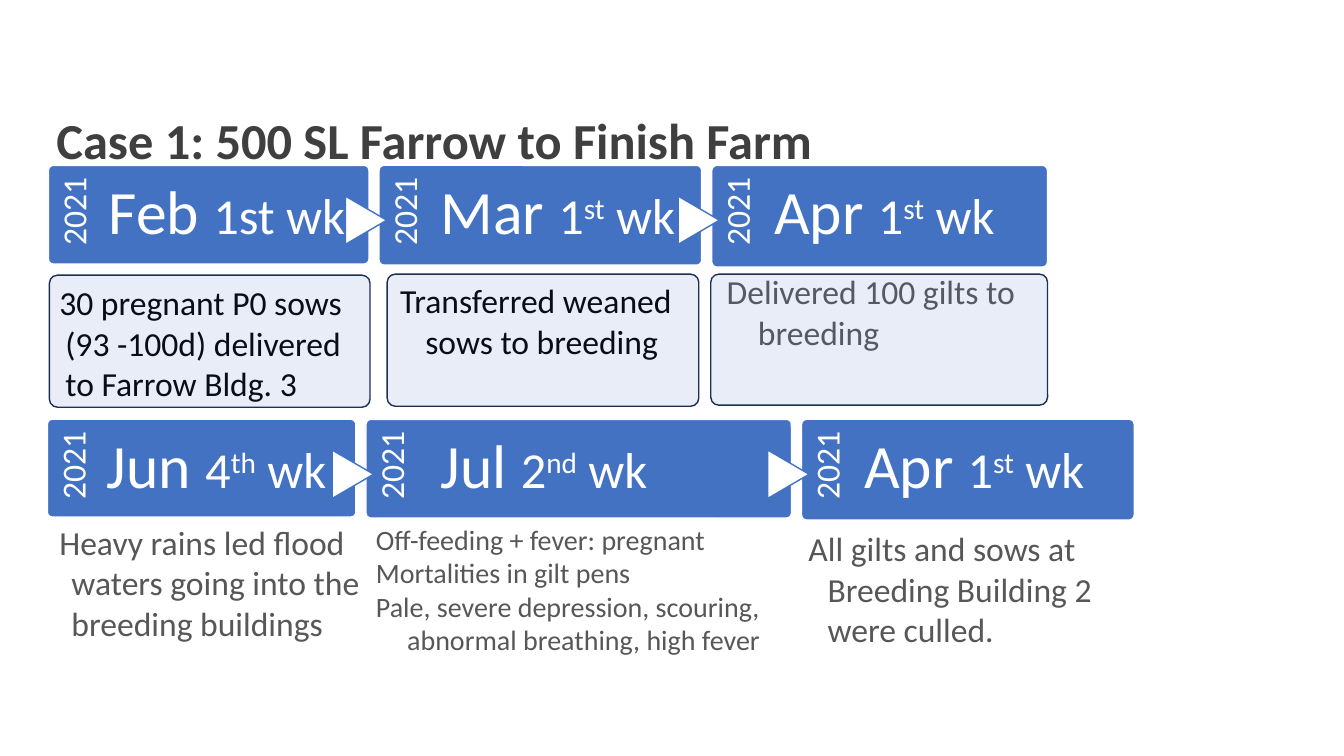
from pptx import Presentation
from pptx.dml.color import RGBColor
from pptx.enum.shapes import MSO_SHAPE as SHAPE
from pptx.enum.text import MSO_ANCHOR as ANCHOR, MSO_AUTO_SIZE as AUTO, PP_ALIGN as ALIGN
from pptx.oxml.ns import qn
from pptx.util import Inches, Pt
from lxml.etree import SubElement

WHITE = RGBColor(0xFF, 0xFF, 0xFF)
BLACK = RGBColor(0, 0, 0)
TITLE = RGBColor(0x3F, 0x3F, 0x3F)
GREY = RGBColor(0x57, 0x57, 0x57)
BLUE = RGBColor(0x43, 0x72, 0xC3)
PANEL = RGBColor(0x44, 0x72, 0xC4)
NAVY = RGBColor(0x1C, 0x30, 0x52)
FONT = "Calibri"

HEADING = "Case 1: 500 SL Farrow to Finish Farm"
YEAR = "2021"
GAP = 0.1

# row: top, left, then steps of (width, height, text indent, month, day, suffix, raised, tail)
ROWS = [
    (1.64, 0.48, [
        (3.18, 0.98, 0.60, "Feb ", "1st", "", " wk"),
        (3.20, 0.99, 0.61, "Mar ", "1", "st", " wk"),
        (3.33, 1.01, 0.62, "Apr ", "1", "st", " wk"),
    ]),
    (4.16, 0.47, [
        (3.06, 0.97, 0.59, "Jun ", "4", "th", " wk"),
        (4.22, 0.98, 0.74, "Jul ", "2", "nd", " wk"),
        (3.30, 1.00, 0.62, "Apr ", "1", "st", " wk"),
    ]),
]

NOTES = [
    ((0.49, 2.75, 3.30, 1.31), 24, BLACK,
     [(1, 0.06, "30 pregnant P0 sows (93 -100d) delivered to Farrow Bldg. 3")]),
    ((3.87, 2.73, 3.46, 0.91), 24, BLACK,
     [(1, 0.25, "Transferred weaned sows to breeding")]),
    ((7.11, 2.64, 3.54, 0.91), 24, GREY,
     [(1, 0.31, "Delivered 100 gilts to breeding")]),
    ((0.49, 5.13, 3.38, 1.31), 24, GREY,
     [(1, 0.12, "Heavy rains led flood waters going into the breeding buildings")]),
    ((3.63, 5.13, 4.37, 1.45), 20, GREY,
     [(1, 0.19, "Off-feeding + fever: pregnant"),
      (2, 0.31, "Mortalities in gilt pens"),
      (3, 0.31, "Pale, severe depression, scouring, abnormal breathing, high fever")]),
    ((7.92, 5.19, 3.33, 1.31), 24, GREY,
     [(2, 0.19, "All gilts and sows at Breeding Building 2 were culled.")]),
]

PANELS = [(7.05, 2.72, 3.34, 1.30), (3.84, 2.72, 3.09, 1.31), (0.49, 2.73, 3.18, 1.31)]


def inches(box):
    return [Inches(v) for v in box]


def style(font, size, color):
    font.name, font.size, font.color.rgb = FONT, Pt(size), color


def add_shape(s, kind, box, fill, line):
    sp = s.shapes.add_shape(kind, *inches(box))
    sp.shadow.inherit = False
    sp.fill.solid()
    sp.fill.fore_color.rgb = fill
    sp.line.color.rgb = line
    sp.line.width = Pt(1)
    return sp


def add_text(s, box, insets):
    sp = s.shapes.add_textbox(*inches(box))
    tf = sp.text_frame
    tf.word_wrap = True
    tf.margin_left, tf.margin_top, tf.margin_right, tf.margin_bottom = inches(insets)
    return sp, tf


def add_step(s, left, top, step, arrow):
    width, height, indent, month, day, suffix, tail = step
    bar = add_shape(s, SHAPE.ROUNDED_RECTANGLE, (left, top, width, height), BLUE, WHITE)
    bar.adjustments[0] = 0.05

    sp, tf = add_text(s, (left - 0.08, top + 0.08, 0.8, 0.64), (0, 0.09, 0.12, 0))
    sp.rotation = 270
    p = tf.paragraphs[0]
    p.text, p.alignment, p.line_spacing = YEAR, ALIGN.RIGHT, 0.9
    style(p.runs[0].font, 24, WHITE)

    if arrow:
        box = (left - 0.37, top + 0.34, 0.48, 0.41)
        add_shape(s, SHAPE.FLOWCHART_EXTRACT, box, WHITE, BLUE).rotation = 90

    sp, tf = add_text(s, (left + indent, top, width * 0.747, height), (0, 0.16, 0, 0))
    p = tf.paragraphs[0]
    p.line_spacing = 0.9
    for text, size in ((month, 44), (day, 36), (suffix, 36), (tail, 36)):
        if text:
            r = p.add_run()
            r.text = text
            style(r.font, size, WHITE)
            if text == suffix:
                r._r.get_or_add_rPr().set("baseline", "30000")


def add_row(s, top, left, steps):
    for i, step in enumerate(steps):
        add_step(s, left, top, step, i > 0)
        left += step[0] + GAP


def add_note(s, box, size, color, lines):
    sp, tf = add_text(s, box, (0.1, 0.05, 0.1, 0.05))
    tf.auto_size = AUTO.SHAPE_TO_FIT_TEXT
    for i, (level, hang, text) in enumerate(lines):
        p = tf.add_paragraph() if i else tf.paragraphs[0]
        p.text, p.level = text, level
        pPr = p._p.get_or_add_pPr()
        pPr.set("marL", str(Inches(hang)))
        pPr.set("indent", str(-Inches(hang)))
        style(p.runs[0].font, size, color)


def add_panel(s, box):
    sp = add_shape(s, SHAPE.ROUNDED_RECTANGLE, box, PANEL, NAVY)
    sp.adjustments[0] = 0.061
    clr = sp._element.spPr.find(qn("a:solidFill")).find(qn("a:srgbClr"))
    SubElement(clr, qn("a:alpha")).set("val", "12000")


def main():
    prs = Presentation()
    prs.slide_width, prs.slide_height = Inches(13.33), Inches(7.5)
    s = prs.slides.add_slide(prs.slide_layouts[5])

    title = s.shapes.title
    title.left, title.top, title.width, title.height = inches((0.46, 0.93, 11.23, 0.99))
    tf = title.text_frame
    tf.text, tf.vertical_anchor = HEADING, ANCHOR.MIDDLE
    p = tf.paragraphs[0]
    p.alignment, p.line_spacing = ALIGN.LEFT, 0.9
    style(p.runs[0].font, 36, TITLE)
    p.runs[0].font.bold = True

    add_row(s, *ROWS[0])
    for note in NOTES[:3]:
        add_note(s, *note)
    for box in PANELS:
        add_panel(s, box)
    add_row(s, *ROWS[1])
    for note in NOTES[3:]:
        add_note(s, *note)

    prs.save("out.pptx")


if __name__ == "__main__":
    main()
